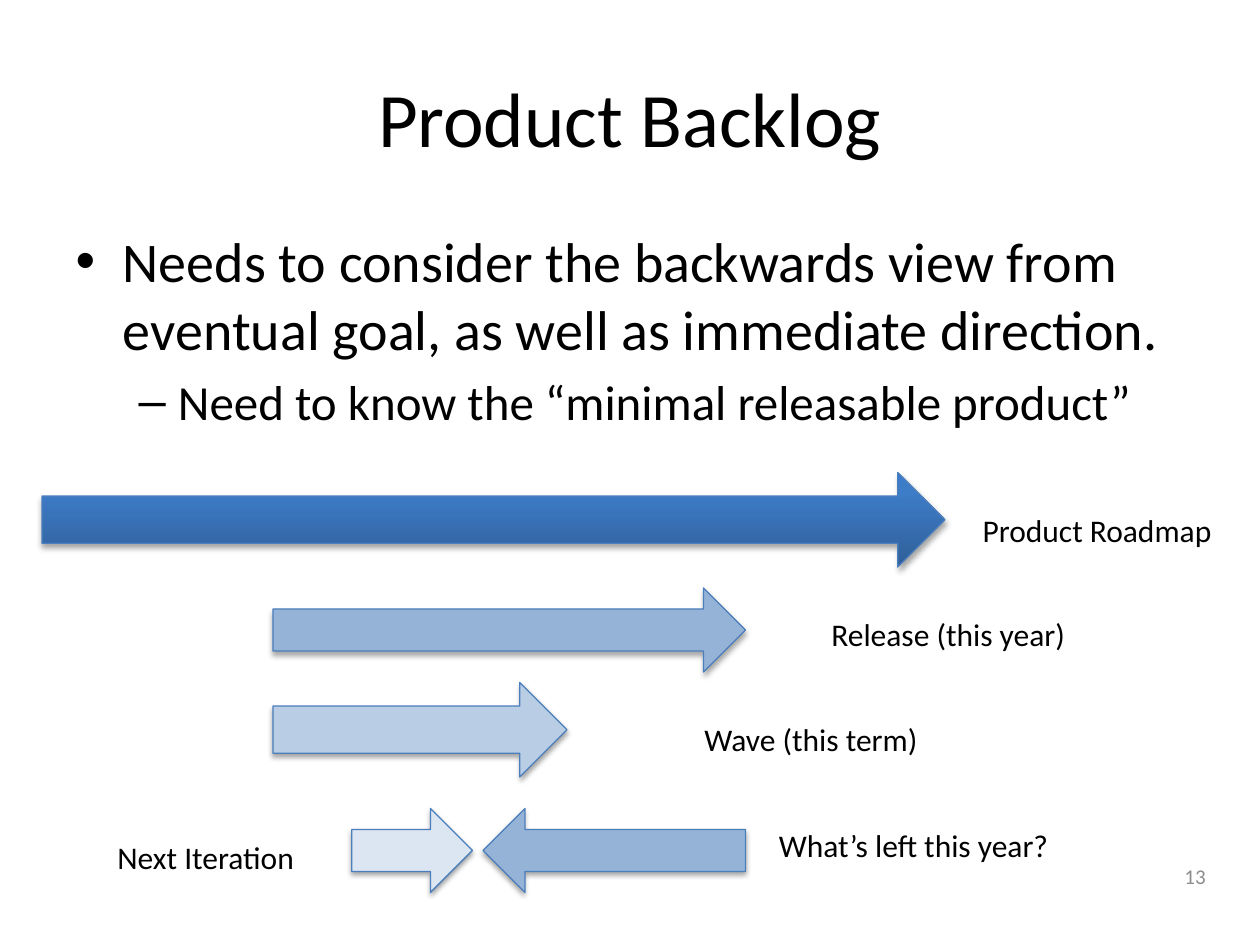
from collections import namedtuple
from lxml import etree
from copy import deepcopy
from pptx import Presentation
from pptx import util as u
from pptx.dml.color import RGBColor
from pptx.enum import shapes, text
from pptx.oxml.ns import qn

BLACK = RGBColor(0x00, 0x00, 0x00)
GREY = RGBColor(0x8C, 0x8C, 0x8C)
OUTLINE = RGBColor(0x4B, 0x7E, 0xBC)
MEDIUM = RGBColor(0x95, 0xB3, 0xD7)
LIGHT = RGBColor(0xB9, 0xCD, 0xE5)
PALE = RGBColor(0xDC, 0xE6, 0xF2)
ROADMAP = [
    (0, RGBColor(0x2F, 0x5F, 0x99)),
    (0.8, RGBColor(0x3D, 0x7C, 0xC7)),
    (1, RGBColor(0x3A, 0x7C, 0xCB)),
]

CELL = u.Inches(1) / 12
Box = namedtuple("Box", "col row cols rows")
PAGE = Box(0, 0, 120, 90)
TITLE = Box(6, 3.6, 108, 15)
BODY = Box(6, 21, 108, 59.4)
DIAGRAM = Box(4, 45, 113, 40)
NUMBER = Box(88, 81, 28, 4.8)

POINTS = [
    (0, 32, "Needs to consider the backwards view from eventual goal, as well as immediate direction."),
    (1, 28, "Need to know the “minimal releasable product”"),
]
HORIZONS = [
    (Box(0, 0, 86, 9), ROADMAP, 0, "Product Roadmap", Box(88.4, 3.1, 24.6, 4.8)),
    (Box(22, 11, 45, 8), MEDIUM, 0, "Release (this year)", Box(74, 13, 25, 4.8)),
    (Box(22, 20, 28, 9), LIGHT, 0, "Wave (this term)", Box(61.9, 23, 23.2, 4.8)),
    (Box(29.5, 32, 11.5, 8), PALE, 0, "Next Iteration", Box(6, 34.2, 19.6, 4.8)),
    (Box(42, 32, 25, 8), MEDIUM, 180, "What’s left this year?", Box(69, 33.1, 28.6, 4.8)),
]


def within(region, box):
    return Box(region.col + box.col, region.row + box.row, box.cols, box.rows)


def emu(box):
    return [round(length * CELL) for length in box]


def set_all(target, values):
    for name, value in values.items():
        setattr(target, name, value)


def write(para, words, size, color=BLACK):
    span = para.add_run()
    span.text = words
    set_all(span.font, {"name": "Calibri", "size": u.Pt(size)})
    span.font.color.rgb = color


def place(shape, box):
    set_all(shape, dict(zip(("left", "top", "width", "height"), emu(box))))


def add_title(page, box):
    title = page.shapes.title
    place(title, box)
    title.text_frame.vertical_anchor = text.MSO_ANCHOR.MIDDLE
    para = title.text_frame.paragraphs[0]
    para.alignment = text.PP_ALIGN.CENTER
    write(para, "Product Backlog", 44)


def add_points(page, box):
    body = page.placeholders[1]
    place(body, box)
    frame = body.text_frame
    for index, (level, size, words) in enumerate(POINTS):
        para = frame.add_paragraph() if index else frame.paragraphs[0]
        para.level = level
        write(para, words, size)


def add_label(page, box, words, size=18, color=BLACK, wrap=False,
              align=text.PP_ALIGN.LEFT, anchor=text.MSO_ANCHOR.TOP):
    frame = page.shapes.add_textbox(*emu(box)).text_frame
    set_all(frame, {"word_wrap": wrap, "vertical_anchor": anchor})
    frame.paragraphs[0].alignment = align
    write(frame.paragraphs[0], words, size, color)


def fill_gradient(shape, stops):
    shape.fill.gradient()
    shape.fill.gradient_angle = 90
    stop_list = shape.element.spPr.find(qn("a:gradFill")).find(qn("a:gsLst"))
    stop_list.append(deepcopy(stop_list[-1]))
    for stop, (position, color) in zip(shape.fill.gradient_stops, stops):
        stop.position = position
        stop.color.rgb = color


def add_shadow(shape):
    shape.shadow.inherit = False
    effects = shape.element.spPr.find(qn("a:effectLst"))
    shadow = etree.SubElement(effects, qn("a:outerShdw"), {
        "blurRad": str(u.Pt(3.1)), "dist": str(u.Pt(1.8)),
        "dir": "5400000", "rotWithShape": "0"})
    color = etree.SubElement(shadow, qn("a:srgbClr"), val=str(BLACK))
    etree.SubElement(color, qn("a:alpha"), val="35000")


def add_arrow(page, box, fill, rotation):
    arrow = page.shapes.add_shape(shapes.MSO_SHAPE.RIGHT_ARROW, *emu(box))
    arrow.rotation = rotation
    if fill is ROADMAP:
        fill_gradient(arrow, fill)
    else:
        arrow.fill.solid()
        arrow.fill.fore_color.rgb = fill
    arrow.line.color.rgb = OUTLINE
    arrow.line.width = u.Pt(0.75)
    add_shadow(arrow)


def add_horizons(page, region):
    for arrow_box, fill, rotation, words, label_box in HORIZONS:
        add_arrow(page, within(region, arrow_box), fill, rotation)
        add_label(page, within(region, label_box), words)


def main():
    deck = Presentation()
    deck.slide_width, deck.slide_height = emu(PAGE)[2:]
    page = deck.slides.add_slide(deck.slide_layouts[1])
    add_title(page, TITLE)
    add_points(page, BODY)
    add_horizons(page, DIAGRAM)
    add_label(page, NUMBER, "13", 12, GREY, True,
              text.PP_ALIGN.RIGHT, text.MSO_ANCHOR.MIDDLE)
    deck.save("out.pptx")


if __name__ == "__main__":
    main()
